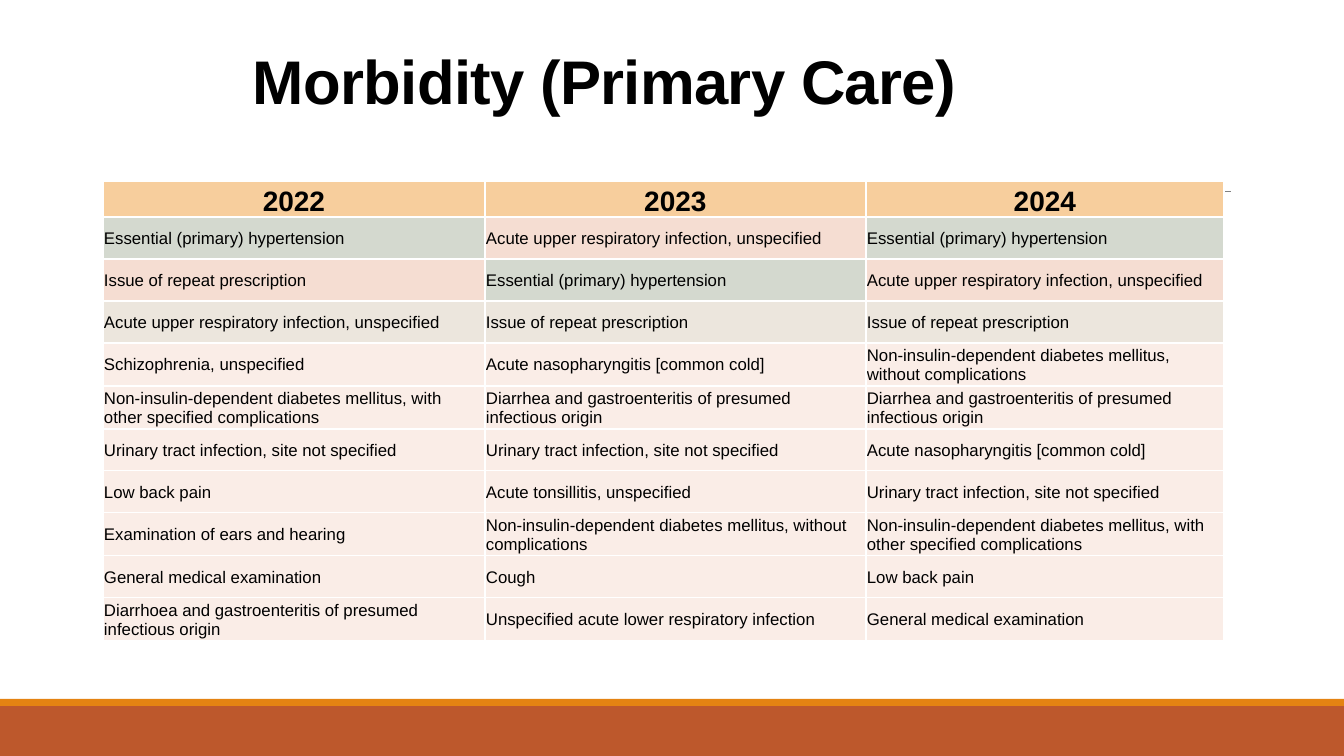
from dataclasses import dataclass

from lxml.etree import SubElement
from pptx import Presentation
from pptx.dml.color import RGBColor
from pptx.enum.shapes import MSO_CONNECTOR as Connector, MSO_SHAPE as Preset
from pptx.enum.text import MSO_ANCHOR as Anchor, PP_ALIGN as Align
from pptx.oxml.ns import qn
from pptx.util import Pt

PX = 914400 / 100.8
SLIDE_WIDTH, SLIDE_HEIGHT = 1344, 756


@dataclass(frozen=True)
class Theme:
    """Colours, font and type sizes of the slide."""
    font: str = "Arial"
    ink: str = "000000"
    rust: str = "BD582C"
    orange: str = "E48312"
    rule: str = "808080"
    border: str = "FFFFFF"
    header: str = "F7CE9D"
    sage: str = "D4D9CF"
    rose: str = "F5DDD2"
    sand: str = "ECE6DD"
    blush: str = "FAEDE7"
    title_size: int = 44
    header_size: int = 20
    body_size: int = 12


THEME = Theme()

HYPERTENSION = "Essential (primary) hypertension"
UPPER_RESPIRATORY = "Acute upper respiratory infection, unspecified"
PRESCRIPTION = "Issue of repeat prescription"
COLD = "Acute nasopharyngitis [common cold]"
DIABETES_WITHOUT = "Non-insulin-dependent diabetes mellitus, without complications"
DIABETES_WITH = "Non-insulin-dependent diabetes mellitus, with other specified complications"
GASTROENTERITIS = "Diarrhea and gastroenteritis of presumed infectious origin"
URINARY = "Urinary tract infection, site not specified"
BACK_PAIN = "Low back pain"
EXAMINATION = "General medical examination"

YEARS = ("2022", "2023", "2024")
RANKING = (
    (HYPERTENSION, UPPER_RESPIRATORY, HYPERTENSION),
    (PRESCRIPTION, HYPERTENSION, UPPER_RESPIRATORY),
    (UPPER_RESPIRATORY, PRESCRIPTION, PRESCRIPTION),
    ("Schizophrenia, unspecified", COLD, DIABETES_WITHOUT),
    (DIABETES_WITH, GASTROENTERITIS, GASTROENTERITIS),
    (URINARY, URINARY, COLD),
    (BACK_PAIN, "Acute tonsillitis, unspecified", URINARY),
    ("Examination of ears and hearing", DIABETES_WITHOUT, DIABETES_WITH),
    (EXAMINATION, "Cough", BACK_PAIN),
    ("Diarrhoea and gastroenteritis of presumed infectious origin",
     "Unspecified acute lower respiratory infection", EXAMINATION),
)
COLUMN_WIDTHS = (382, 381, 358)
HEADER_HEIGHT, ONE_LINE_HEIGHT, TWO_LINE_HEIGHT = 36, 42, 43
LONGEST_ONE_LINE = 50


def px(*lengths):
    """Turn pixel lengths into a list of EMU."""
    return [round(length * PX) for length in lengths]


def rgb(colour):
    """Turn a hex colour into an RGBColor."""
    return RGBColor.from_string(colour)


def set_font(paragraph, size, bold):
    """Set the theme font on a whole paragraph."""
    font = paragraph.font
    font.name, font.size, font.bold = THEME.font, Pt(size), bold
    font.color.rgb = rgb(THEME.ink)


def add_band(slide, left, top, width, height, colour):
    """Add a plain colour band."""
    band = slide.shapes.add_shape(Preset.RECTANGLE, *px(left, top, width, height))
    band.shadow.inherit = False
    band.fill.solid()
    band.fill.fore_color.rgb = rgb(colour)
    band.line.fill.background()


def add_footer(slide, left, top, width, height):
    """Add the rust footer with its orange strip on top."""
    strip = 7
    add_band(slide, left, top + strip, width, height - strip, THEME.rust)
    add_band(slide, left, top, width, strip, THEME.orange)


def add_rule(slide, left, top, width):
    """Add the thin grey rule that runs behind the table."""
    rule = slide.shapes.add_connector(
        Connector.STRAIGHT, *px(left, top, left + width, top))
    rule.line.color.rgb = rgb(THEME.rule)
    rule.line.width = Pt(0.5)
    SubElement(rule._element.spPr, qn("a:effectLst"))


def add_title(slide, left, top, width, height):
    """Add the slide title, resting on the bottom of its box."""
    frame = slide.shapes.add_textbox(*px(left, top, width, height)).text_frame
    frame.word_wrap = True
    frame.vertical_anchor = Anchor.BOTTOM
    title = frame.paragraphs[0]
    title.line_spacing = 0.85
    run = title.add_run()
    run.text = "Morbidity (Primary Care)"
    run._r.get_or_add_rPr().set("spc", "-50")
    set_font(title, THEME.title_size, True)


def add_borders(cell):
    """Draw the white border on all four sides of a cell."""
    properties = cell._tc.get_or_add_tcPr()
    for side in ("a:lnL", "a:lnR", "a:lnT", "a:lnB"):
        edge = SubElement(properties, qn(side), w=str(Pt(1)))
        fill = SubElement(edge, qn("a:solidFill"))
        SubElement(fill, qn("a:srgbClr"), val=THEME.border)


def fill_cell(cell, text, colour, is_header):
    """Write and style one table cell."""
    add_borders(cell)
    cell.fill.solid()
    cell.fill.fore_color.rgb = rgb(colour)
    cell.margin_left, cell.margin_right, cell.margin_top, cell.margin_bottom = px(1, 1, 1, 0)
    cell.vertical_anchor = Anchor.BOTTOM if is_header else Anchor.MIDDLE
    cell.text = text
    entry = cell.text_frame.paragraphs[0]
    entry.alignment = Align.CENTER if is_header else Align.LEFT
    set_font(entry, THEME.header_size if is_header else THEME.body_size, is_header)


def diagnosis_colour(rank, diagnosis):
    """Choose the fill of a diagnosis by its rank."""
    if rank > 3:
        return THEME.blush
    if rank == 3:
        return THEME.sand
    return THEME.sage if diagnosis == HYPERTENSION else THEME.rose


def row_height(diagnoses):
    """Give a row more height when one of its entries wraps."""
    wraps = max(map(len, diagnoses)) > LONGEST_ONE_LINE
    return TWO_LINE_HEIGHT if wraps else ONE_LINE_HEIGHT


def add_ranking(slide, left, top):
    """Add the table of leading diagnoses by year."""
    heights = [HEADER_HEIGHT, *map(row_height, RANKING)]
    table = slide.shapes.add_table(
        len(heights), len(YEARS),
        *px(left, top, sum(COLUMN_WIDTHS), sum(heights))).table
    table.first_row = table.horz_banding = False
    for column, width in zip(table.columns, px(*COLUMN_WIDTHS)):
        column.width = width
    for row, height in zip(table.rows, px(*heights)):
        row.height = height
    for place, year in enumerate(YEARS):
        fill_cell(table.cell(0, place), year, THEME.header, True)
    for rank, diagnoses in enumerate(RANKING, 1):
        for place, diagnosis in enumerate(diagnoses):
            colour = diagnosis_colour(rank, diagnosis)
            fill_cell(table.cell(rank, place), diagnosis, colour, False)


def main():
    """Build and save the slide."""
    deck = Presentation()
    deck.slide_width, deck.slide_height = px(SLIDE_WIDTH, SLIDE_HEIGHT)
    slide = deck.slides.add_slide(deck.slide_layouts[6])
    add_footer(slide, 0, 699, SLIDE_WIDTH, SLIDE_HEIGHT - 699)
    add_rule(slide, 132, 191, 1099)
    add_title(slide, 243, 25, 1101, 97)
    add_ranking(slide, 103, 181)
    deck.save("out.pptx")


if __name__ == "__main__":
    main()
